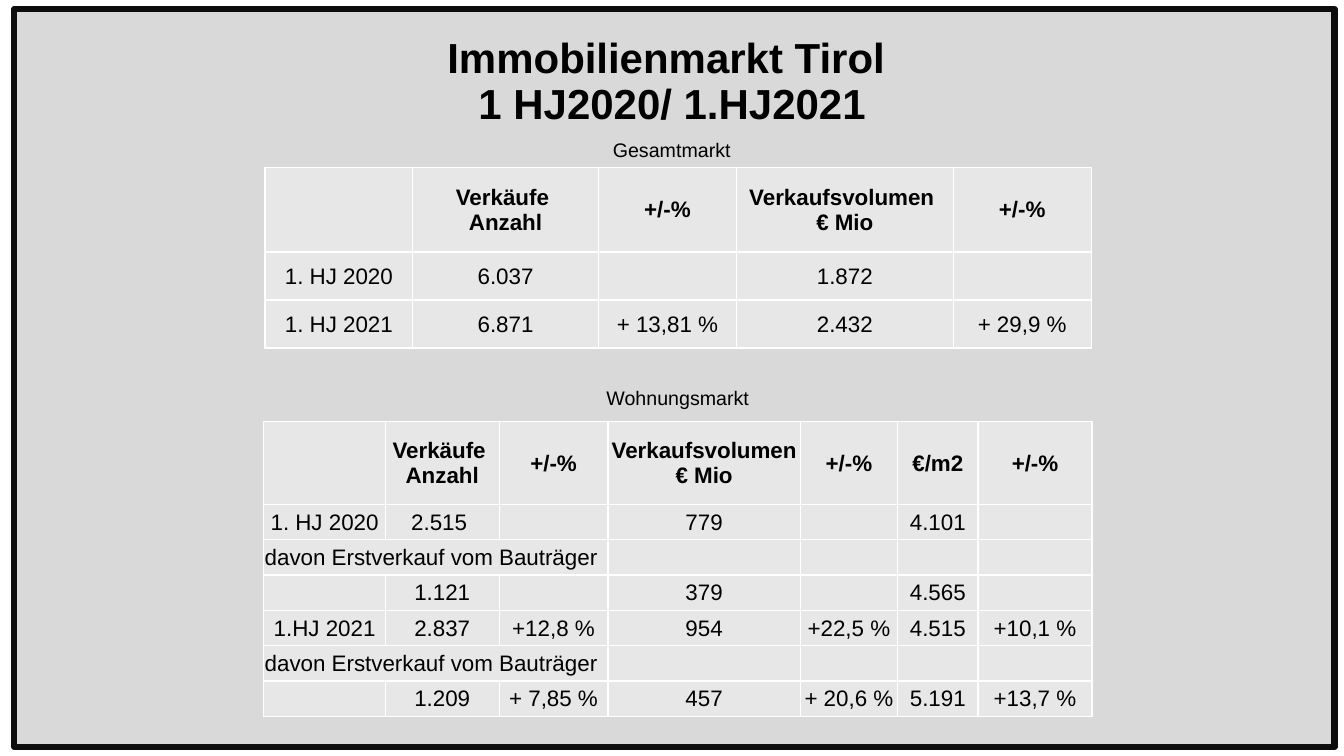
from pptx import Presentation
from pptx.dml.color import RGBColor
from pptx.enum.shapes import MSO_SHAPE
from pptx.enum.text import MSO_ANCHOR, MSO_AUTO_SIZE, PP_ALIGN
from pptx.oxml import parse_xml
from pptx.oxml.ns import nsdecls
from pptx.util import Cm, Pt

RECTANGLE = MSO_SHAPE.RECTANGLE
MIDDLE, BOTTOM = MSO_ANCHOR.MIDDLE, MSO_ANCHOR.BOTTOM
LEFT, CENTER = PP_ALIGN.LEFT, PP_ALIGN.CENTER
NO_AUTO_SIZE, FIT_SHAPE = MSO_AUTO_SIZE.NONE, MSO_AUTO_SIZE.SHAPE_TO_FIT_TEXT

BLACK = RGBColor(0x00, 0x00, 0x00)
WHITE = RGBColor(0xFF, 0xFF, 0xFF)
FRAME_LINE = RGBColor(0x0D, 0x0D, 0x0D)
FRAME_FILL = RGBColor(0xD9, 0xD9, 0xD9)
CELL_FILL = RGBColor(0xE7, 0xE7, 0xE7)
FONT = "Arial"

SALES = "Verkäufe \nAnzahl"
VOLUME = "Verkaufsvolumen \n€ Mio"
CHANGE = "+/-%"
FIRST_SALE = "davon Erstverkauf vom Bauträger"

TOTAL_MARKET = [
    ["", SALES, CHANGE, VOLUME, CHANGE],
    ["1. HJ 2020", "6.037", "", "1.872", ""],
    ["1. HJ 2021", "6.871", "+ 13,81 %", "2.432", "+ 29,9 %"],
]
FLAT_MARKET = [
    ["", SALES, CHANGE, VOLUME, CHANGE, "€/m2", CHANGE],
    ["1. HJ 2020", "2.515 ", "", "779", "", "4.101", ""],
    [FIRST_SALE, "", "", "", "", "", ""],
    ["", "1.121", "", "379", "", "4.565", ""],
    ["1.HJ 2021", "2.837", "+12,8 %", "954", "+22,5 %", "4.515", "+10,1 %"],
    [FIRST_SALE, "", "", "", "", "", ""],
    ["", "1.209", "+ 7,85 %", "457", "+ 20,6 %", "5.191", "+13,7 %"],
]


def format_text(text_frame, size, bold=False, alignment=CENTER):
    for paragraph in text_frame.paragraphs:
        paragraph.alignment = alignment
        for run in paragraph.runs:
            run.font.name = FONT
            run.font.size = Pt(size)
            run.font.bold = bold
            run.font.color.rgb = BLACK


def add_frame(slide):
    """Draw the grey panel and send it behind the title."""
    frame = slide.shapes.add_shape(RECTANGLE, Cm(0.36), Cm(0.23), Cm(33.27), Cm(18.59))
    frame.shadow.inherit = False
    frame.fill.solid()
    frame.fill.fore_color.rgb = FRAME_FILL
    frame.line.color.rgb = FRAME_LINE
    frame.line.width = Pt(4.5)
    slide.shapes.title._element.addprevious(frame._element)


def set_title(slide, text):
    title = slide.shapes.title
    title.left, title.top, title.width, title.height = Cm(4.24), Cm(0.79), Cm(25.4), Cm(2.57)
    text_frame = title.text_frame
    text_frame.text = text
    text_frame.auto_size = NO_AUTO_SIZE
    text_frame.vertical_anchor = BOTTOM
    text_frame.paragraphs[0].line_spacing = 0.9
    format_text(text_frame, 30, bold=True)


def add_caption(slide, text, left, top):
    caption = slide.shapes.add_textbox(left, top, Cm(16.94), Cm(0.86))
    text_frame = caption.text_frame
    text_frame.word_wrap = True
    text_frame.auto_size = FIT_SHAPE
    text_frame.text = text
    format_text(text_frame, 14)


def add_cell_borders(cell):
    properties = cell._tc.get_or_add_tcPr()
    for side in ("lnL", "lnR", "lnT", "lnB"):
        properties.append(parse_xml(
            f'<a:{side} {nsdecls("a")} w="{Pt(1)}"><a:solidFill>'
            f'<a:srgbClr val="{WHITE}"/></a:solidFill></a:{side}>'))


def format_cell(cell, text, is_header):
    add_cell_borders(cell)
    cell.fill.solid()
    cell.fill.fore_color.rgb = CELL_FILL
    cell.vertical_anchor = MIDDLE
    cell.margin_left = cell.margin_right = cell.margin_top = Cm(0.02)
    cell.margin_bottom = 0
    cell.text_frame.text = text
    format_text(cell.text_frame, 16, is_header, LEFT if text == FIRST_SALE else CENTER)


def add_market_table(slide, rows, left, top, column_widths, header_height, row_height):
    height = header_height + row_height * (len(rows) - 1)
    table = slide.shapes.add_table(
        len(rows), len(column_widths), left, top, Cm(sum(column_widths)), height).table
    for column, width in zip(table.columns, column_widths):
        column.width = Cm(width)
    for row_index, values in enumerate(rows):
        is_header = row_index == 0
        table.rows[row_index].height = header_height if is_header else row_height
        for column_index, text in enumerate(values):
            format_cell(table.cell(row_index, column_index), text, is_header)
        if values[0] == FIRST_SALE:
            table.cell(row_index, 0).merge(table.cell(row_index, 2))


def main():
    presentation = Presentation()
    presentation.slide_width, presentation.slide_height = Cm(33.87), Cm(19.05)
    title_only = presentation.slide_layouts[5]
    slide = presentation.slides.add_slide(title_only)
    add_frame(slide)
    set_title(slide, "Immobilienmarkt Tirol \v1 HJ2020/ 1.HJ2021")
    add_caption(slide, "Gesamtmarkt", Cm(8.46), Cm(3.35))
    add_market_table(slide, TOTAL_MARKET, Cm(6.68), Cm(4.22),
                     [3.72, 4.68, 3.48, 5.46, 3.48], Cm(2.13), Cm(1.21))
    add_caption(slide, "Wohnungsmarkt", Cm(8.61), Cm(9.6))
    add_market_table(slide, FLAT_MARKET, Cm(6.65), Cm(10.62),
                     [3.06, 2.87, 2.74, 4.85, 2.45, 2.03, 2.87], Cm(2.09), Cm(0.89))
    presentation.save("out.pptx")


if __name__ == "__main__":
    main()
